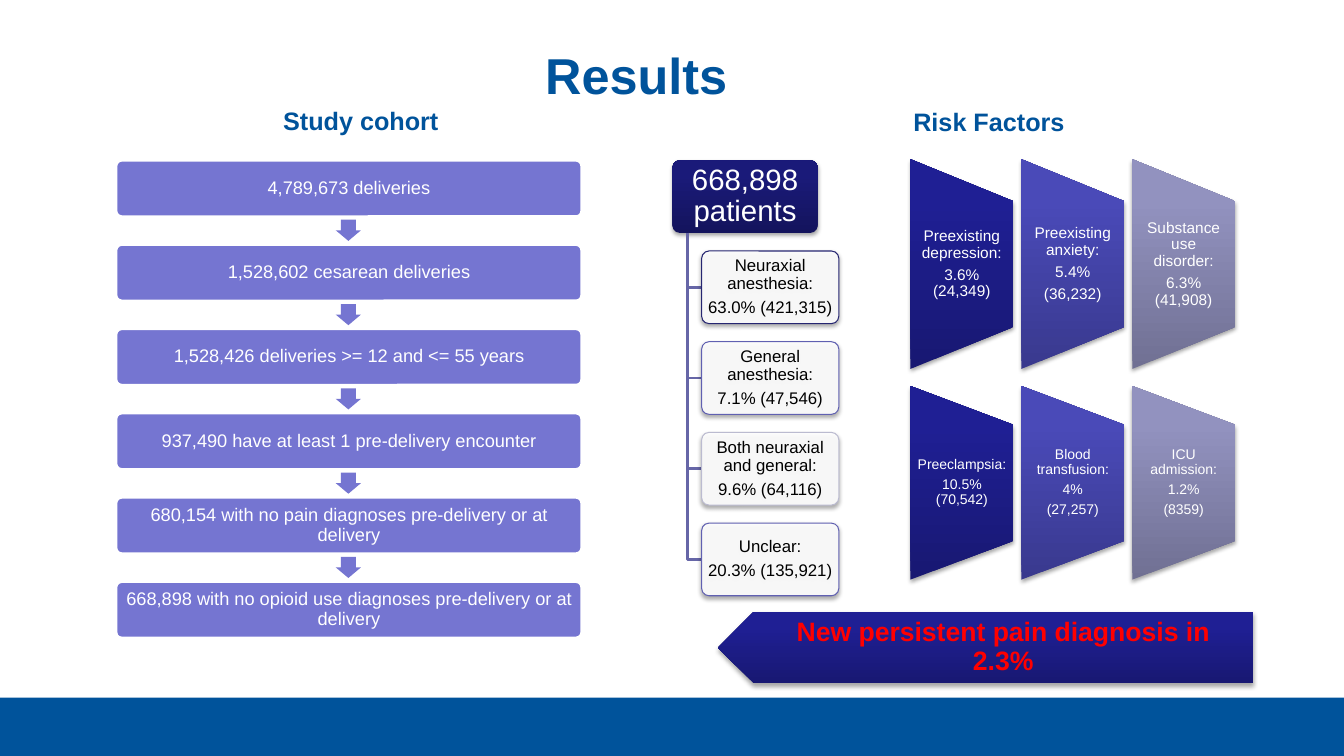
from dataclasses import dataclass

from lxml import etree
from pptx import Presentation
from pptx.dml.color import RGBColor
from pptx.enum import shapes, text
from pptx.oxml import ns
from pptx.util import Inches, Pt

BLUE, LILAC, WHITE, BLACK, RED = "00539B", "7575D1", "FFFFFF", "000000", "FF0000"
BRANCH = "6666A7"
ROOT_FILL = ("14145D", "1A1A79", "18187B")
NAVY = ("181872", "1F1F94", "1D1D97")
INDIGO = ("39398E", "4A4AB8", "4848BB")
GREY = ("707093", "9292BF", "9191C0")
KIND = shapes.MSO_SHAPE


@dataclass
class Box:
    left: float
    top: float
    width: float
    height: float

    def lengths(self) -> list:
        return [Inches(v) for v in (self.left, self.top, self.width, self.height)]


@dataclass
class Anesthesia:
    lines: str
    outline: str


@dataclass
class RiskRow:
    center: float
    height: float
    size: float
    inset: float
    factors: tuple


COHORT = (
    "4,789,673 deliveries",
    "1,528,602 cesarean deliveries",
    "1,528,426 deliveries >= 12 and <= 55 years",
    "937,490 have at least 1 pre-delivery encounter",
    "680,154 with no pain diagnoses pre-delivery or at delivery",
    "668,898 with no opioid use diagnoses pre-delivery or at delivery",
)
ANESTHESIA = (
    Anesthesia("Neuraxial anesthesia:\n63.0% (421,315)", "262671"),
    Anesthesia("General anesthesia:\n7.1% (47,546)", "6060B1"),
    Anesthesia("Both neuraxial and general:\n9.6% (64,116)", "BBBBD0"),
    Anesthesia("Unclear:\n20.3% (135,921)", "6060B1"),
)
RISKS = (
    RiskRow(2.62, 2.08, 11, 0.08, (
        "Preexisting depression:\n3.6% (24,349)",
        "Preexisting anxiety:\n5.4%\n(36,232)",
        "Substance use disorder:\n6.3% (41,908)")),
    RiskRow(4.79, 1.92, 10, 0.07, (
        "Preeclampsia:\n10.5% (70,542)",
        "Blood transfusion:\n4%\n(27,257)",
        "ICU admission:\n1.2%\n(8359)")),
)


def rgb(color: str) -> RGBColor:
    return RGBColor.from_string(color)


def write(sp, content: str, size: float, color: str, bold: bool = False,
          insets: tuple = (0.1, 0.05, 0.1, 0.05), centered: bool = True,
          spaced: bool = True) -> None:
    tf = sp.text_frame
    tf.text = content
    tf.word_wrap = centered
    tf.margin_left, tf.margin_top, tf.margin_right, tf.margin_bottom = map(Inches, insets)
    if centered:
        tf.vertical_anchor = text.MSO_ANCHOR.MIDDLE
    for p in tf.paragraphs:
        if centered:
            p.alignment = text.PP_ALIGN.CENTER
        if spaced:
            p.line_spacing = 0.9
            p.space_after = Pt(0.35 * size)
        for r in p.runs:
            r.font.name, r.font.size, r.font.bold = "Arial", Pt(size), bold
            r.font.color.rgb = rgb(color)


def add_shape(s, kind, box: Box, fill: str, line: str = "", width: float = 0):
    sp = s.shapes.add_shape(kind, *box.lengths())
    sp.shadow.inherit = False
    sp.fill.solid()
    sp.fill.fore_color.rgb = rgb(fill)
    if line:
        sp.line.color.rgb = rgb(line)
        sp.line.width = Pt(width)
    else:
        sp.line.fill.background()
    if kind == KIND.ROUNDED_RECTANGLE:
        sp.adjustments[0] = 0.1
    return sp


def add_textbox(s, box: Box, content: str, size: float, color: str, **options) -> None:
    write(s.shapes.add_textbox(*box.lengths()), content, size, color, **options)


def sub(parent, tag: str, **attributes):
    return etree.SubElement(parent, ns.qn(tag), attributes)


def cast_shadow(sp) -> None:
    effects = sp._element.spPr.find(ns.qn("a:effectLst"))
    shadow = sub(effects, "a:outerShdw", blurRad=str(Pt(3.1)), dist=str(Pt(1.8)),
                 dir="5400000", rotWithShape="0")
    sub(sub(shadow, "a:srgbClr", val=BLACK), "a:alpha", val="35000")


def shade(sp, colors: tuple) -> None:
    """Replace the solid fill by a bottom-to-top gradient that ignores rotation."""
    solid = sp._element.spPr.find(ns.qn("a:solidFill"))
    grad = etree.Element(ns.qn("a:gradFill"), rotWithShape="0")
    stops = sub(grad, "a:gsLst")
    for percent, color in zip((0, 80, 100), colors):
        sub(sub(stops, "a:gs", pos=str(percent * 1000)), "a:srgbClr", val=color)
    sub(grad, "a:lin", ang="16200000", scaled="0")
    solid.getparent().replace(solid, grad)
    cast_shadow(sp)


def add_cohort(s) -> None:
    top, pitch = 1.59, (5.77 - 1.59) / 5
    for i, step in enumerate(COHORT):
        y = top + i * pitch
        sp = add_shape(s, KIND.ROUNDED_RECTANGLE, Box(1.15, y, 4.62, 0.56), LILAC, WHITE, 2)
        write(sp, step, 13, WHITE, insets=(0.05,) * 4)
        if i < len(COHORT) - 1:
            arrow = add_shape(s, KIND.RIGHT_ARROW, Box(3.35, y + 0.57, 0.21, 0.25), LILAC)
            arrow.rotation = 90
            arrow.adjustments[0] = 0.6


def add_branch(s, trunk: float, top: float, left: float, middle: float) -> None:
    builder = s.shapes.build_freeform(Inches(trunk), Inches(top))
    corners = ((trunk, middle), (left, middle))
    builder.add_line_segments([(Inches(x), Inches(y)) for x, y in corners], close=False)
    branch = builder.convert_to_shape()
    branch.shadow.inherit = False
    branch.fill.background()
    branch.line.color.rgb = rgb(BRANCH)
    branch.line.width = Pt(2)


def add_anesthesia_tree(s) -> None:
    height, pitch, trunk, left = 0.72, 0.9, 6.82, 6.96
    root = Box(6.67, 1.59, 1.44, height)
    sp = add_shape(s, KIND.ROUNDED_RECTANGLE, root, ROOT_FILL[0])
    shade(sp, ROOT_FILL)
    write(sp, "668,898 patients", 21, WHITE, insets=(0.04, 0.03, 0.04, 0.03))
    for i, group in enumerate(ANESTHESIA, 1):
        y = root.top + i * pitch
        add_branch(s, trunk, root.top + height, left, y + height / 2)
        sp = add_shape(s, KIND.ROUNDED_RECTANGLE, Box(left, y, 1.36, height),
                       WHITE, group.outline, 0.75)
        color = sp._element.spPr.find(ns.qn("a:solidFill"))[0]
        sub(color, "a:alpha", val="90000")
        cast_shadow(sp)
        write(sp, group.lines, 12, BLACK, insets=(0.03, 0.02, 0.03, 0.02))


def add_risks(s) -> None:
    width, pitch = 1.02, 1.1
    for row in RISKS:
        for i, (factor, colors) in enumerate(zip(row.factors, (NAVY, INDIGO, GREY))):
            left = 9.03 + i * pitch
            turned = Box(left + (width - row.height) / 2, row.center - width / 2,
                         row.height, width)
            sp = add_shape(s, KIND.FLOWCHART_MANUAL_OPERATION, turned, colors[0])
            sp.rotation = 270
            shade(sp, colors)
            label = Box(left, row.center - 0.3 * row.height, width, 0.6 * row.height)
            add_textbox(s, label, factor, row.size, WHITE,
                        insets=(row.inset, 0, row.inset, 0))


def add_conclusion(s) -> None:
    sp = add_shape(s, KIND.PENTAGON, Box(7.12, 6.07, 5.31, 0.71), NAVY[0])
    sp.rotation = 180
    shade(sp, NAVY)
    add_textbox(s, Box(7.3, 6.07, 5.14, 0.71), "New persistent pain diagnosis in 2.3%",
                19, RED, bold=True, insets=(0.31, 0.08, 0.15, 0.08))


def main() -> None:
    prs = Presentation()
    prs.slide_width, prs.slide_height = Inches(13.33), Inches(7.5)
    s = prs.slides.add_slide(prs.slide_layouts[5])
    title = s.shapes.title
    title.left, title.top, title.width, title.height = Box(0.2, 0.35, 12.22, 0.78).lengths()
    write(title, "Results", 36, BLUE, bold=True, spaced=False)
    add_shape(s, KIND.RECTANGLE, Box(0, 6.92, 13.33, 0.58), BLUE)
    add_risks(s)
    add_anesthesia_tree(s)
    add_conclusion(s)
    add_cohort(s)
    for box, heading in ((Box(2.71, 1, 1.76, 0.4), "Study cohort"),
                         (Box(8.96, 1.01, 1.72, 0.4), "Risk Factors")):
        add_textbox(s, box, heading, 18, BLUE, bold=True, centered=False, spaced=False)
    prs.save("out.pptx")


if __name__ == "__main__":
    main()
